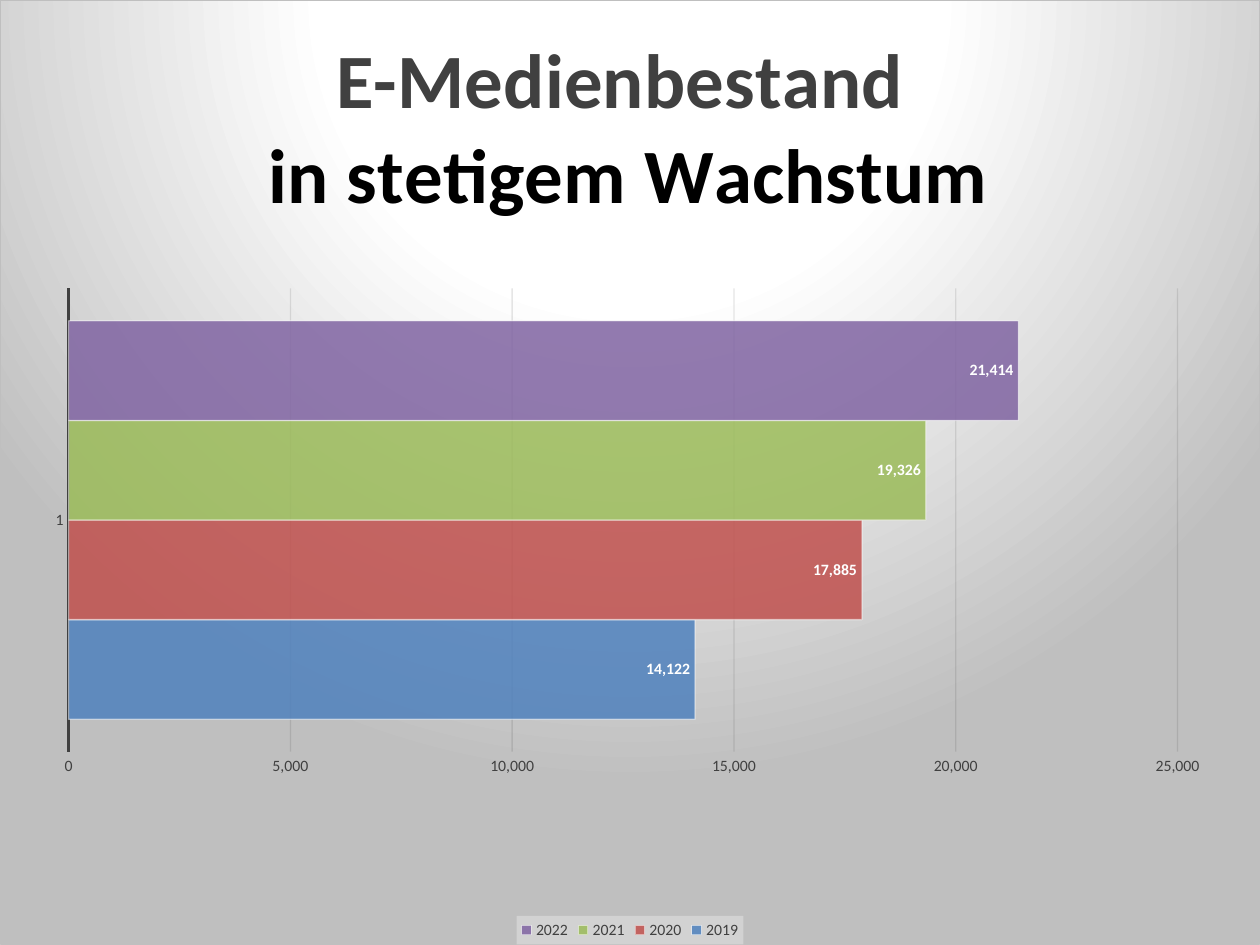
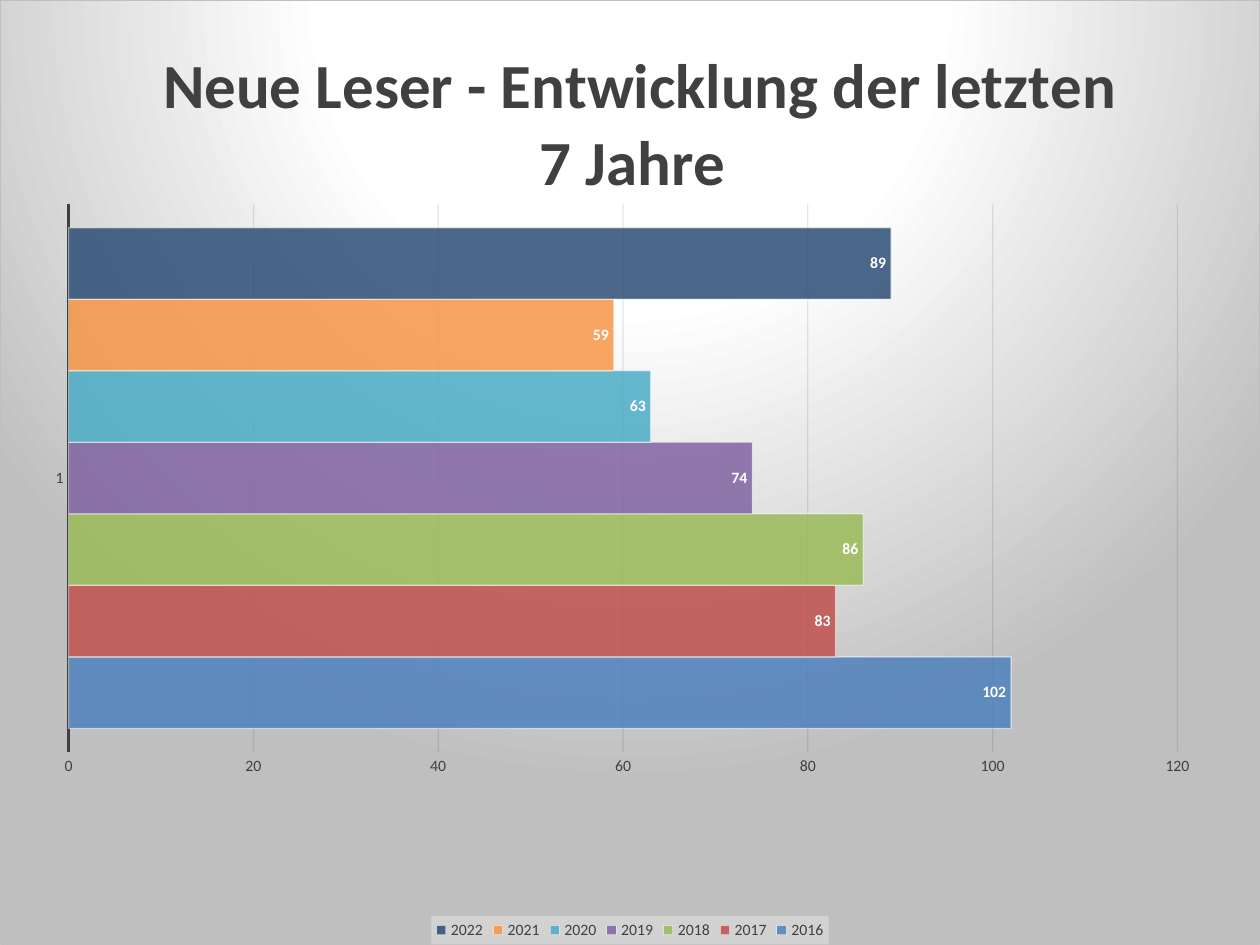
from lxml.etree import SubElement
from pptx import Presentation
from pptx.chart.data import CategoryChartData
from pptx.dml.color import RGBColor
from pptx.enum.chart import XL_CHART_TYPE, XL_LABEL_POSITION, XL_LEGEND_POSITION, XL_TICK_MARK
from pptx.oxml import parse_xml
from pptx.oxml.ns import nsdecls, qn
from pptx.util import Cm, Pt

COLORS = {
    "white": "FFFFFF", "black": "000000", "text": "404040", "grid": "0D0D0D",
    "edge": "BFBFBF", "legend": "F2F2F2",
    "blue": "4F81BD", "red": "C0504D", "green": "9BBB59", "purple": "8064A2",
    "teal": "4BACC6", "orange": "F79646", "navy": "2C4D75",
}
BAR_COLORS = ("blue", "red", "green", "purple", "teal", "orange", "navy")
FONT = "Calibri"
NUMBER_FORMAT = "#,##0"
PAGE_BOX = (Cm(0), Cm(0), Cm(25.4), Cm(19.05))
SMALL = {"size": Pt(9), "name": FONT, "bold": False}


def rgb(name):
    return RGBColor.from_string(COLORS[name])


def style_font(font, color, **values):
    for key, value in values.items():
        setattr(font, key, value)
    font.color.rgb = rgb(color)


def paint(fill, color, opacity=100):
    fill.solid()
    fill.fore_color.rgb = rgb(color)
    if opacity < 100:
        tint = fill._xPr.find(f"{qn('a:solidFill')}/{qn('a:srgbClr')}")
        SubElement(tint, qn("a:alpha")).set("val", str(opacity * 1000))


def draw_line(line, color, width, opacity=100):
    line.width = Pt(width)
    paint(line.fill, color, opacity)


def make_layout(target=None, **fractions):
    """Return a manual chart layout in fractions of the chart area."""
    layout = parse_xml(f"<c:layout {nsdecls('c')}><c:manualLayout/></c:layout>")
    settings = {"layoutTarget": target} if target else {}
    settings |= {"xMode": "edge", "yMode": "edge"} | fractions
    for key, value in settings.items():
        SubElement(layout[0], qn(f"c:{key}")).set("val", str(value))
    return layout


def drop_layout(parent):
    for layout in parent.findall(qn("c:layout")):
        parent.remove(layout)


def add_title(chart, lines, size, left):
    """Set the title from (text, colour) lines."""
    title = chart.chart_title
    frame = title.text_frame
    for number, (text, color) in enumerate(lines):
        para = frame.add_paragraph() if number else frame.paragraphs[0]
        span = para.add_run()
        span.text = text
        style_font(span.font, color, size=Pt(size), name=FONT, bold=True)
    drop_layout(title._element)
    overlay = title._element.find(qn("c:overlay"))
    overlay.addprevious(make_layout(x=left, y=0.03))


def add_backdrop(chart):
    stops = "".join(
        f'<a:gs pos="{position * 1000}"><a:srgbClr val="{COLORS[color]}"/></a:gs>'
        for position, color in ((0, "white"), (39, "white"), (100, "edge")))
    chart._chartSpace.find(qn("c:chart")).addnext(parse_xml(
        f'<c:spPr {nsdecls("c", "a")}><a:gradFill><a:gsLst>{stops}</a:gsLst>'
        '<a:path path="circle"><a:fillToRect l="50000" t="-80000" r="50000" b="180000"/>'
        f'</a:path></a:gradFill><a:ln w="{Pt(0.75)}"><a:solidFill>'
        f'<a:srgbClr val="{COLORS["edge"]}"/></a:solidFill></a:ln></c:spPr>'))


def style_axes(chart):
    for axis in (chart.category_axis, chart.value_axis):
        axis.major_tick_mark = axis.minor_tick_mark = XL_TICK_MARK.NONE
        style_font(axis.tick_labels.font, "text", **SMALL)
    chart.category_axis.has_major_gridlines = False
    draw_line(chart.category_axis.format.line, "text", 1.5)
    values = chart.value_axis
    values.format.line.fill.background()
    values.has_major_gridlines = True
    draw_line(values.major_gridlines.format.line, "grid", 0.75, 10)
    values.tick_labels.number_format = NUMBER_FORMAT
    values.tick_labels.number_format_is_linked = False


def style_bars(plot):
    plot.gap_width = 65
    plot.vary_by_categories = False
    for series, color in zip(plot.series, BAR_COLORS):
        series.invert_if_negative = False
        paint(series.format.fill, color, 85)
        draw_line(series.format.line, "white", 0.75, 50)
        labels = series.data_labels
        settings = {"show_value": True, "position": XL_LABEL_POSITION.INSIDE_END,
                    "number_format": NUMBER_FORMAT, "number_format_is_linked": False}
        for key, value in settings.items():
            setattr(labels, key, value)
        style_font(labels.font, "white", **SMALL | {"bold": True})


def add_legend(chart):
    chart.has_legend = True
    legend = chart.legend
    legend.position = XL_LEGEND_POSITION.BOTTOM
    legend.include_in_layout = False
    style_font(legend.font, "text", **SMALL)
    legend._element.find(qn("c:overlay")).addnext(parse_xml(
        f'<c:spPr {nsdecls("c", "a")}><a:solidFill><a:srgbClr val="{COLORS["legend"]}">'
        '<a:alpha val="39000"/></a:srgbClr></a:solidFill><a:ln><a:noFill/></a:ln></c:spPr>'))


def add_chart_page(deck, box, first_year, counts, title, plot_top, plot_height):
    """Add a page whose box is filled by one bar per year."""
    page = deck.slides.add_slide(deck.slide_layouts[6])
    data = CategoryChartData(number_format=NUMBER_FORMAT)
    data.categories = ["1"]
    for year, count in enumerate(counts, first_year):
        data.add_series(str(year), [count])
    chart = page.shapes.add_chart(XL_CHART_TYPE.BAR_CLUSTERED, *box, data).chart
    style_font(chart.font, "black", size=Pt(10), name=FONT)
    add_backdrop(chart)
    add_title(chart, **title)
    style_axes(chart)
    style_bars(chart.plots[0])
    add_legend(chart)
    plot_area = chart._chartSpace.find(f"{qn('c:chart')}/{qn('c:plotArea')}")
    drop_layout(plot_area)
    plot_area.insert(0, make_layout("inner", x=0.054, y=plot_top, w=0.881, h=plot_height))


def main():
    deck = Presentation()
    deck.slide_width, deck.slide_height = PAGE_BOX[2:]
    add_chart_page(
        deck, PAGE_BOX, 2019, (14122, 17885, 19326, 21414),
        {"lines": [("E-Medienbestand ", "text"), ("in stetigem Wachstum", "black")],
         "size": 44, "left": 0.21},
        plot_top=0.305, plot_height=0.491)
    add_chart_page(
        deck, PAGE_BOX, 2016, (102, 83, 86, 74, 63, 59, 89),
        {"lines": [("Neue Leser - Entwicklung der letzten 7 Jahre ", "text")],
         "size": 36, "left": 0.12},
        plot_top=0.216, plot_height=0.58)
    deck.save("out.pptx")


if __name__ == "__main__":
    main()
